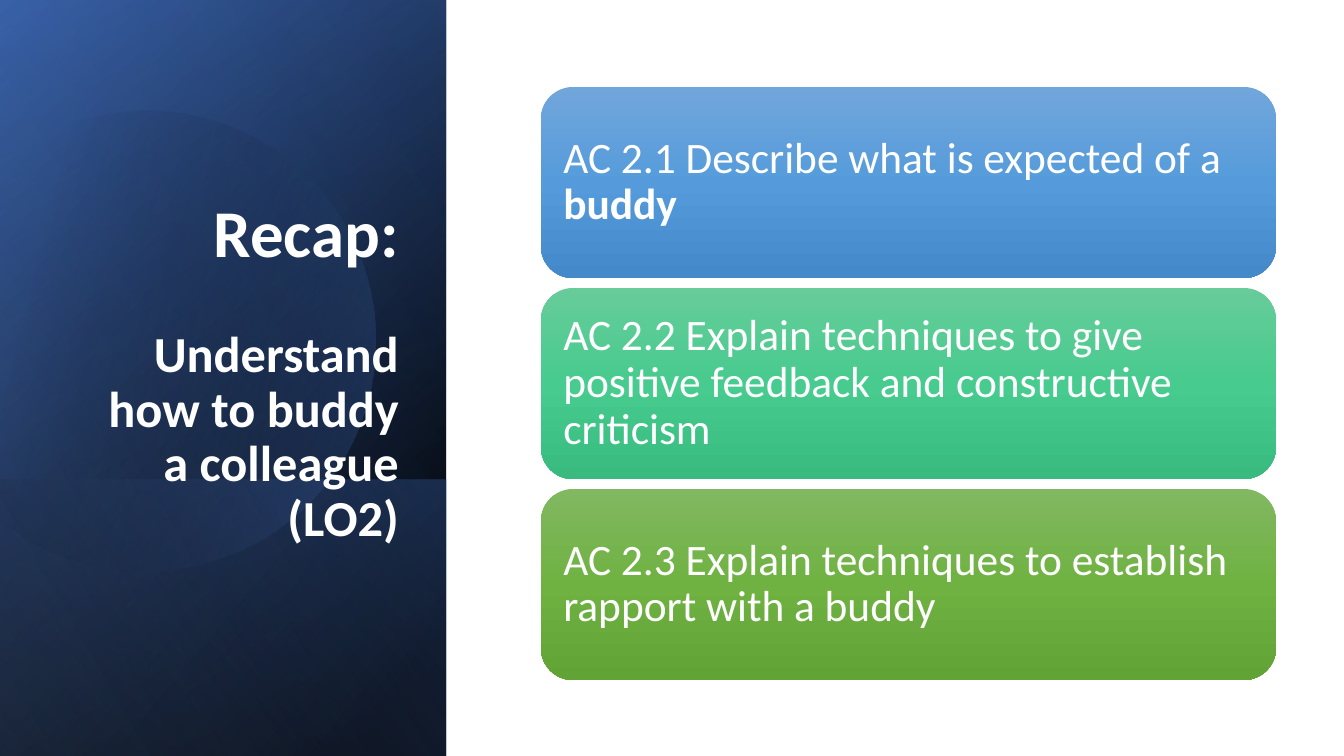
import math

from lxml import etree
from pptx import Presentation
from pptx.dml.color import RGBColor
from pptx.enum.shapes import MSO_SHAPE
from pptx.enum.text import MSO_ANCHOR, MSO_AUTO_SIZE, PP_ALIGN
from pptx.oxml.ns import qn
from pptx.util import Emu, Pt

RECT, ROUNDED = MSO_SHAPE.RECTANGLE, MSO_SHAPE.ROUNDED_RECTANGLE
MIDDLE, BOTTOM = MSO_ANCHOR.MIDDLE, MSO_ANCHOR.BOTTOM
LEFT, RIGHT = PP_ALIGN.LEFT, PP_ALIGN.RIGHT
NO_FIT = MSO_AUTO_SIZE.NONE

WHITE = RGBColor(0xFF, 0xFF, 0xFF)
BLACK = RGBColor(0x00, 0x00, 0x00)
NAVY = RGBColor(0x2F, 0x55, 0x97)
BLUE = RGBColor(0x44, 0x72, 0xC4)
PALE_BLUE = RGBColor(0x8F, 0xAA, 0xDC)
SKY = [RGBColor.from_string(c) for c in ("71A6DB", "559BDB", "448ACA")]
MINT = [RGBColor.from_string(c) for c in ("67CC9A", "47CB8E", "39BB7F")]
GREEN = [RGBColor.from_string(c) for c in ("81B861", "6FB242", "62A336")]

FONT = "Calibri"
HEADING, SUBHEADING = "Recap:", "Understand how to buddy a colleague (LO2)"
HEADING_PT, GAP_PT, SUBHEADING_PT, CARD_PT = 47.7, 38, 36, 31
CARDS = [  # (text runs as (text, bold), gradient colours)
    ([("AC 2.1 Describe what is expected of a ", False), ("buddy", True)], SKY),
    ([("AC 2.2 Explain techniques to give positive feedback and "
       "constructive criticism", False)], MINT),
    ([("AC 2.3 Explain techniques to establish rapport with a buddy", False)], GREEN),
]

# Gradient stops are (position %, colour, opacity %)
PANEL_W, PANEL_H = 446, 756
PANEL_LAYERS = [  # (top, height, stops, angle)
    (0, PANEL_H, [(8, BLACK, 100), (100, NAVY, 100)], 50),
    (0, PANEL_H, [(0, BLACK, 0), (99, BLUE, 46)], 30),
    (480, 276, [(2, BLUE, 29), (100, BLACK, 30)], 130),
]
GLOW = (0, PANEL_H, [(0, BLACK, 0), (99, PALE_BLUE, 11)], 120)
DISC_STOPS, DISC_ANGLE = [(29, BLACK, 0), (100, BLUE, 43)], 30
DISC_CENTER, DISC_TURN = (160, 337), -16.1
DISC_START = (150, 111)
DISC_PATH = [  # three points make a Bezier curve, one point a line
    [(248, 113), (338, 178), (366, 277)],
    [(401, 400), (331, 527), (209, 562)],
    [(132, 585), (53, 566), (-3, 518)],
    [(-15, 507)], [(-15, 176)], [(0, 162)],
    [(23, 143), (50, 129), (81, 120)],
    [(104, 114), (127, 111), (150, 111)],
]
TITLE_BOX = (65, 185, 344, 367)
CARD_X, CARD_Y, CARD_W, CARD_H, CARD_PITCH, CARD_INSET = 541, 87, 735, 191, 201, 13
CURVE_STEPS = 24


def px(n):
    return Emu(round(n * 914400 / 100.8))


def paint(shape, stops, angle):
    """Fill with a linear gradient, angle clockwise in degrees, no line or shadow."""
    shape.shadow.inherit = False
    shape.line.fill.background()
    shape.fill.gradient()
    grad = shape._element.spPr.find(qn("a:gradFill"))
    stop_list = grad.find(qn("a:gsLst"))
    for old in list(stop_list):
        stop_list.remove(old)
    for pos, color, opacity in stops:
        gs = etree.SubElement(stop_list, qn("a:gs"), pos=str(pos * 1000))
        clr = etree.SubElement(gs, qn("a:srgbClr"), val=str(color))
        if opacity < 100:
            etree.SubElement(clr, qn("a:alpha"), val=str(opacity * 1000))
    grad.find(qn("a:lin")).set("ang", str(angle * 60000))


def add_panel_layer(shapes, top, height, stops, angle):
    """Add a mirrored rectangle turned a quarter so that it spans the panel width."""
    x, y = (PANEL_W - height) / 2, top + (height - PANEL_W) / 2
    layer = shapes.add_shape(RECT, px(x), px(y), px(height), px(PANEL_W))
    layer._element.spPr.xfrm.set("flipH", "1")
    layer.rotation = 90
    paint(layer, stops, angle)


def disc_points():
    points = [DISC_START]
    for segment in DISC_PATH:
        if len(segment) == 1:
            points += segment
            continue
        controls = [points[-1], *segment]
        for i in range(1, CURVE_STEPS + 1):
            t = i / CURVE_STEPS
            weights = [math.comb(3, k) * t**k * (1 - t)**(3 - k) for k in range(4)]
            points.append(tuple(sum(w * c[axis] for w, c in zip(weights, controls))
                                for axis in (0, 1)))
    return points


def unturn(point):
    """Turn a point back about the disc centre, before the shape is rotated."""
    a = math.radians(-DISC_TURN)
    dx, dy = (v - c for v, c in zip(point, DISC_CENTER))
    return (px(DISC_CENTER[0] + dx * math.cos(a) - dy * math.sin(a)),
            px(DISC_CENTER[1] + dx * math.sin(a) + dy * math.cos(a)))


def add_disc(shapes):
    start, *rest = [unturn(p) for p in disc_points()]
    builder = shapes.build_freeform(*start)
    builder.add_line_segments(rest, close=True)
    disc = builder.convert_to_shape()
    disc.rotation = DISC_TURN
    paint(disc, DISC_STOPS, DISC_ANGLE)


def set_frame(tf, anchor, align):
    for name, value in {"word_wrap": True, "auto_size": NO_FIT,
                        "vertical_anchor": anchor}.items():
        setattr(tf, name, value)
    p = tf.paragraphs[0]
    p.alignment, p.line_spacing = align, 0.9
    return p


def add_run(p, text, size, bold):
    r = p.add_run()
    r.text = text
    for name, value in {"name": FONT, "size": Pt(size), "bold": bold}.items():
        setattr(r.font, name, value)
    r.font.color.rgb = WHITE


def fill_title(title):
    title.left, title.top, title.width, title.height = map(px, TITLE_BOX)
    p = set_frame(title.text_frame, BOTTOM, RIGHT)
    add_run(p, HEADING, HEADING_PT, True)
    for size in (HEADING_PT, GAP_PT):
        p.add_line_break()
        etree.SubElement(p._p[-1], qn("a:rPr"), sz=str(round(size * 100)))
    add_run(p, SUBHEADING, SUBHEADING_PT, True)


def add_card(shapes, row, runs, colors):
    card = shapes.add_shape(ROUNDED, px(CARD_X), px(CARD_Y + row * CARD_PITCH),
                            px(CARD_W), px(CARD_H))
    paint(card, [(pos, c, 100) for pos, c in zip((0, 50, 100), colors)], 90)
    tf = card.text_frame
    for side in ("left", "top", "right", "bottom"):
        setattr(tf, f"margin_{side}", px(CARD_INSET))
    p = set_frame(tf, MIDDLE, LEFT)
    for text, bold in runs:
        add_run(p, text, CARD_PT, bold)


def main():
    prs = Presentation()
    prs.slide_width, prs.slide_height = px(1344), px(756)
    s = prs.slides.add_slide(prs.slide_layouts[5])
    title = s.shapes.title
    for layer in PANEL_LAYERS:
        add_panel_layer(s.shapes, *layer)
    add_disc(s.shapes)
    add_panel_layer(s.shapes, *GLOW)
    s.shapes._spTree.append(title._element)  # bring the title in front of the panel
    fill_title(title)
    for row, (runs, colors) in enumerate(CARDS):
        add_card(s.shapes, row, runs, colors)
    prs.save("out.pptx")


if __name__ == "__main__":
    main()
